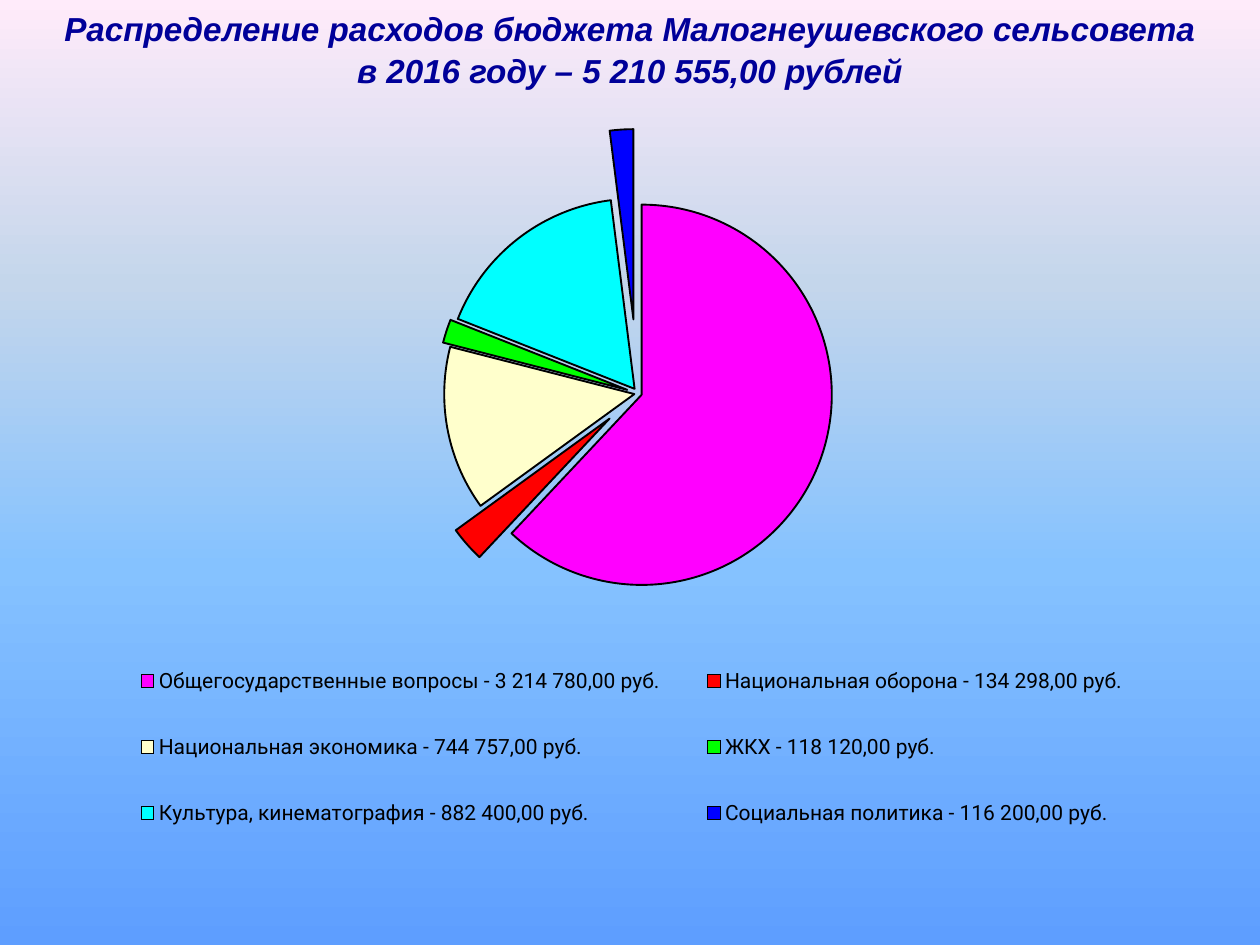
from lxml.etree import SubElement
from pptx import Presentation
from pptx.chart.data import CategoryChartData
from pptx.dml.color import RGBColor
from pptx.enum.chart import XL_CHART_TYPE, XL_LEGEND_POSITION
from pptx.enum.text import PP_ALIGN
from pptx.oxml.ns import qn
from pptx.util import Inches, Pt

COLORS = {
    "title": "000099",
    "ink": "000000",
    "general": "FF00FF",
    "defence": "FF0000",
    "economy": "FFFFCC",
    "housing": "00FF00",
    "culture": "00FFFF",
    "social": "0000FF",
}
SKY = [(0, "FFEBFA"), (30, "C4D6EB"), (60, "85C2FF"), (100, "5E9EFF")]

TITLE = [
    "Распределение расходов бюджета Малогнеушевского сельсовета",
    "в 2016 году – 5 210 555,00 рублей",
]

# Label, share in percent, colour, explosion in percent of the radius
EXPENSES = [
    ("Общегосударственные вопросы - 3 214 780,00 руб.", 62, "general", 2),
    ("Национальная оборона - 134 298,00 руб.", 3, "defence", 20),
    ("Национальная экономика - 744 757,00 руб.", 14, "economy", 2),
    ("ЖКХ - 118 120,00 руб.", 2, "housing", 6),
    ("Культура, кинематография - 882 400,00 руб.", 17, "culture", 3),
    ("Социальная политика - 116 200,00 руб.", 2, "social", 39),
]


def color(name):
    return RGBColor.from_string(COLORS[name])


def paint_background(page):
    fill = page.background.fill
    fill.gradient()
    fill.gradient_angle = 270
    stops = page.background._cSld.find(".//" + qn("a:gsLst"))
    for stop in list(stops):
        stops.remove(stop)
    for percent, value in SKY:
        stop = SubElement(stops, qn("a:gs"), pos=str(percent * 1000))
        SubElement(stop, qn("a:srgbClr"), val=value)


def add_title(page):
    box = page.shapes.add_textbox(0, 0, Inches(10), Inches(0.73))
    frame = box.text_frame
    frame.word_wrap = True
    for index, line in enumerate(TITLE):
        para = frame.paragraphs[0] if index == 0 else frame.add_paragraph()
        para.alignment = PP_ALIGN.CENTER
        para.line_spacing = 1.05
        span = para.add_run()
        span.text = line
        span.font.name = "Arial"
        span.font.size = Pt(19)
        span.font.bold = True
        span.font.italic = True
        span.font.color.rgb = color("title")


def set_font(font, size):
    font.name = "Roboto"
    font.size = Pt(size)
    font.color.rgb = color("ink")


def place(element, left, top, width, height, inner=False):
    """Give a chart part a fixed place, in fractions of the chart."""
    layout = element.find(qn("c:layout"))
    if layout is None:
        layout = element._add_layout() if hasattr(element, "_add_layout") else element.makeelement(qn("c:layout"))
        if layout.getparent() is None:
            element.insert(0, layout)
    manual = SubElement(layout, qn("c:manualLayout"))
    settings = [("xMode", "edge"), ("yMode", "edge"),
                ("x", left), ("y", top), ("w", width), ("h", height)]
    if inner:
        settings.insert(0, ("layoutTarget", "inner"))
    for tag, value in settings:
        SubElement(manual, qn("c:" + tag), val=str(value))


def style_slices(series):
    for index, (_, _, name, explosion) in enumerate(EXPENSES):
        point = series.points[index]
        point.format.fill.solid()
        point.format.fill.fore_color.rgb = color(name)
        point.format.line.color.rgb = color("ink")
        point.format.line.width = Pt(1.09)
        # The explosion stands just before the slice's shape properties
        properties = point._element.find(
            f"{qn('c:dPt')}[{index + 1}]/{qn('c:spPr')}")
        offset = properties.makeelement(qn("c:explosion"), val=str(explosion))
        properties.addprevious(offset)


def add_pie(page):
    data = CategoryChartData()
    data.categories = [expense[0] for expense in EXPENSES]
    data.add_series("Series 1", [expense[1] for expense in EXPENSES])
    chart = page.shapes.add_chart(
        XL_CHART_TYPE.PIE, 0, Inches(0.35), Inches(10.03), Inches(7.02), data).chart
    chart.has_title = False
    set_font(chart.font, 10.1)

    plot = chart.plots[0]
    plot.vary_by_categories = True
    style_slices(plot.series[0])
    place(plot._element.getparent(), 0.14, 0.18, 0.73, 0.43, inner=True)

    # Legend in two columns below the pie
    chart.has_legend = True
    legend = chart.legend
    legend.position = XL_LEGEND_POSITION.BOTTOM
    legend.include_in_layout = False
    set_font(legend.font, 12)
    place(legend._element, 0.08, 0.66, 0.84, 0.27)


def main():
    deck = Presentation()
    deck.slide_width = Inches(10)
    deck.slide_height = Inches(7.5)
    page = deck.slides.add_slide(deck.slide_layouts[6])
    paint_background(page)
    add_pie(page)
    add_title(page)
    deck.save("out.pptx")


if __name__ == "__main__":
    main()
